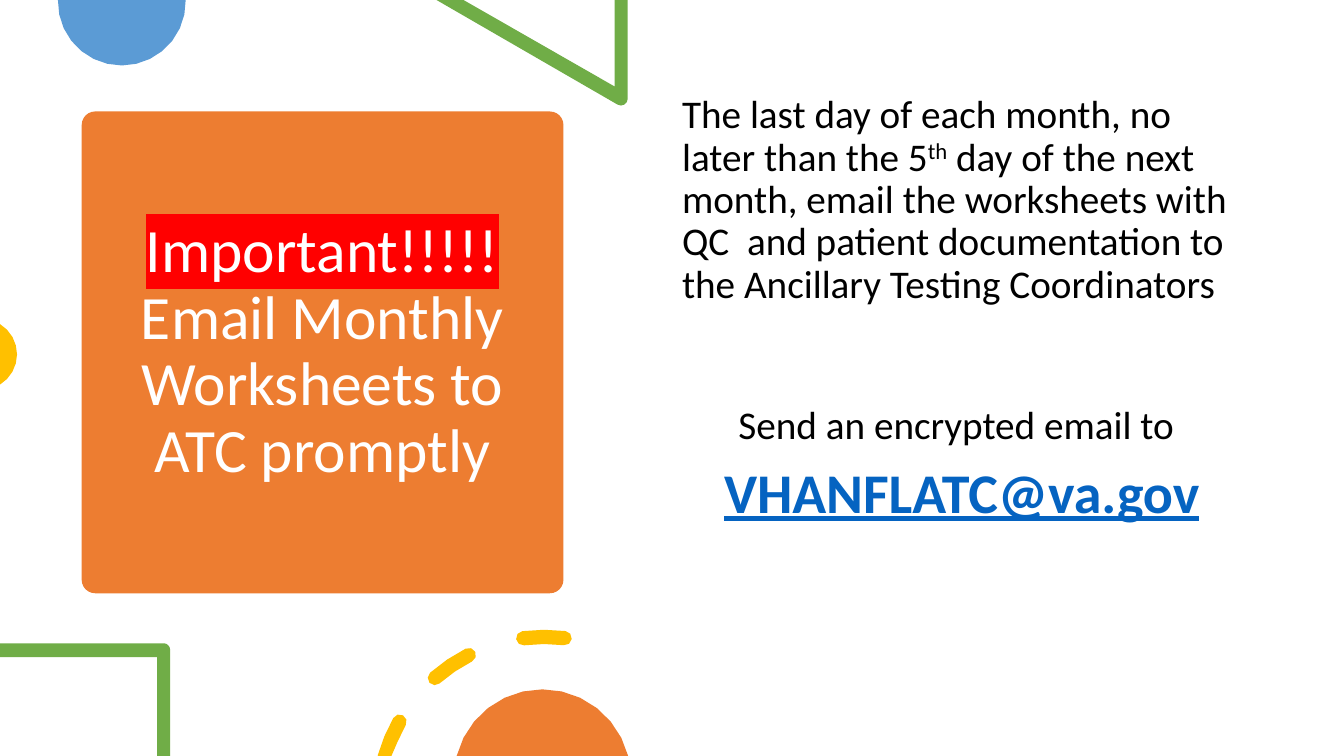
import math
from dataclasses import dataclass

import lxml.etree
import pptx
import pptx.dml.color
import pptx.enum.shapes
import pptx.enum.text
import pptx.oxml.ns
import pptx.util

Cm = pptx.util.Cm
Pt = pptx.util.Pt
RGB = pptx.dml.color.RGBColor.from_string
ALIGN = pptx.enum.text.PP_ALIGN
ANCHOR = pptx.enum.text.MSO_ANCHOR
WIDE, HIGH = 33.87, 19.05


@dataclass(frozen=True)
class Theme:
    """Hold the colours, font and type sizes."""
    font: str = "Calibri"
    orange: str = "ED7D31"
    blue: str = "5B9BD5"
    green: str = "70AD47"
    gold: str = "FFC000"
    red: str = "FF0000"
    white: str = "FFFFFF"
    black: str = "000000"
    link: str = "0563C1"
    title: int = 44
    text: int = 28
    space: int = 36
    mail: int = 40


THEME = Theme()


def apply(item, values):
    """Set each named value on an item."""
    for name, value in values.items():
        setattr(item, name, value)


def place(item, box):
    """Move an item to a box given in centimetres."""
    apply(item, dict(zip(("left", "top", "width", "height"), map(Cm, box))))


def paint(shape, color):
    """Give a shape a flat fill with no line or shadow."""
    shape.shadow.inherit = False
    shape.fill.solid()
    shape.fill.fore_color.rgb = RGB(color)
    shape.line.fill.background()


def write(para, text, size, color, **extra):
    """Add a formatted run to a paragraph."""
    run = para.add_run()
    run.text = text
    run.font.color.rgb = RGB(color)
    apply(run.font, {"name": THEME.font, "size": Pt(size), **extra})
    return run


def mark(run, color):
    """Highlight a run."""
    tag = pptx.oxml.ns.qn
    light = lxml.etree.Element(tag("a:highlight"))
    lxml.etree.SubElement(light, tag("a:srgbClr")).set("val", color)
    run.font._element.find(tag("a:solidFill")).addnext(light)


def arc(x, y, radius, start, end, steps=4):
    """List points along an arc, in degrees."""
    turns = [math.radians(start + (end - start) * i / steps)
             for i in range(steps + 1)]
    return [(x + radius * math.cos(t), y + radius * math.sin(t)) for t in turns]


def dash(x, y, radius, half, start, end):
    """List the outline of a curved dash with round ends."""
    (ax, ay), (bx, by) = arc(x, y, radius, start, end, 1)
    return (arc(x, y, radius + half, start, end, 2)
            + arc(bx, by, half, end, end + 180)[1:-1]
            + arc(x, y, radius - half, end, start, 2)
            + arc(ax, ay, half, start + 180, start + 360)[1:-1])


def draw(slide, color, *loops):
    """Draw one filled shape from outlines kept within the slide."""
    rings = [[(Cm(min(max(x, 0), WIDE)), Cm(min(max(y, 0), HIGH)))
              for x, y in loop] for loop in loops]
    form = slide.shapes.build_freeform(*rings[0][0], scale=1.0)
    for ring in rings:
        if ring is not rings[0]:
            form.move_to(*ring[0])
        form.add_line_segments(ring[1:], close=True)
    paint(form.convert_to_shape(), color)


def decor(slide, box):
    """Draw the edge ornaments inside the box."""
    left, top, wide, high = box
    base = top + high
    draw(slide, THEME.blue,
         arc(left + 3.07, top + 0.04, 1.61, -1.4, 181.4, 14))
    draw(slide, THEME.green, [(left + x, top + y) for x, y in
                              [(15.82, 0), (15.49, 0), (15.49, 2.18),
                               (11.68, 0), (11, 0),
                               *arc(15.65, 2.49, 0.17, 120, 0)]])
    draw(slide, THEME.gold, arc(left - 0.46, top + 8.93, 0.89, -59, 59, 8))
    draw(slide, THEME.green, [(left + x, base + y) for x, y in
                              [(0, -2.84), *arc(4.12, -2.67, 0.17, 270, 360),
                               (4.29, 0), (3.96, 0), (3.96, -2.49),
                               (0, -2.49)]])
    draw(slide, THEME.gold,
         *[dash(left + 13.72, base + 1.19, 4.19, 0.18, start, end)
           for start, end in ((196, 209.4), (228.8, 243), (262.7, 277))])
    draw(slide, THEME.orange,
         arc(left + 13.67, base + 0.55, 2.23, 194.3, 345.7, 12))


def card(slide, box):
    """Place the orange card and its title in the box."""
    left, top, wide, high = box
    panel = slide.shapes.add_shape(
        pptx.enum.shapes.MSO_SHAPE.ROUNDED_RECTANGLE, *map(Cm, box))
    panel.adjustments[0] = 0.028
    paint(panel, THEME.orange)
    title = slide.shapes.title
    title._element.getparent().append(title._element)
    place(title, (left + 0.6, top + 0.28, wide - 1.2, high - 0.56))
    frame = title.text_frame
    apply(frame, {"word_wrap": True, "vertical_anchor": ANCHOR.MIDDLE,
                  "auto_size": pptx.enum.text.MSO_AUTO_SIZE.NONE})
    para = frame.paragraphs[0]
    apply(para, {"alignment": ALIGN.CENTER, "line_spacing": 0.9})
    mark(write(para, "Important!!!!!", THEME.title, THEME.white), THEME.red)
    para.add_line_break()
    write(para, "Email Monthly Worksheets to ATC promptly",
          THEME.title, THEME.white)


def notice(slide, box):
    """Write the mailing instructions in the box."""
    frame = slide.shapes.add_textbox(*map(Cm, box)).text_frame
    frame.word_wrap = True
    size, ink = THEME.text, THEME.black
    when, send, mail = (frame.paragraphs[0], frame.add_paragraph(),
                        frame.add_paragraph())
    for para, align, gap in ((when, ALIGN.LEFT, 0), (send, ALIGN.CENTER, 64),
                             (mail, ALIGN.CENTER, 10)):
        apply(para, {"alignment": align, "line_spacing": 0.9,
                     "space_before": Pt(gap)})
    write(when, "The last day of each month, no later than the 5", size, ink)
    write(when, "th", size, ink).font._element.set("baseline", "30000")
    write(when, " day of the next month, email the worksheets with QC  and "
          "patient documentation to the Ancillary Testing Coordinators",
          size, ink)
    write(send, "Send an encrypted email to", size, ink)
    write(send, " ", THEME.space, ink)
    write(mail, "VHANFLATC@va.gov", THEME.mail, THEME.link,
          bold=True, underline=True)


def main():
    """Build and save the slide."""
    deck = pptx.Presentation()
    apply(deck, {"slide_width": Cm(WIDE), "slide_height": Cm(HIGH)})
    slide = deck.slides.add_slide(deck.slide_layouts.get_by_name("Title Only"))
    card(slide, (2.06, 2.81, 12.14, 12.14))
    decor(slide, (0, 0, WIDE, HIGH))
    notice(slide, (16.94, 2.27, 14.6, 15.11))
    deck.save("out.pptx")


if __name__ == "__main__":
    main()
